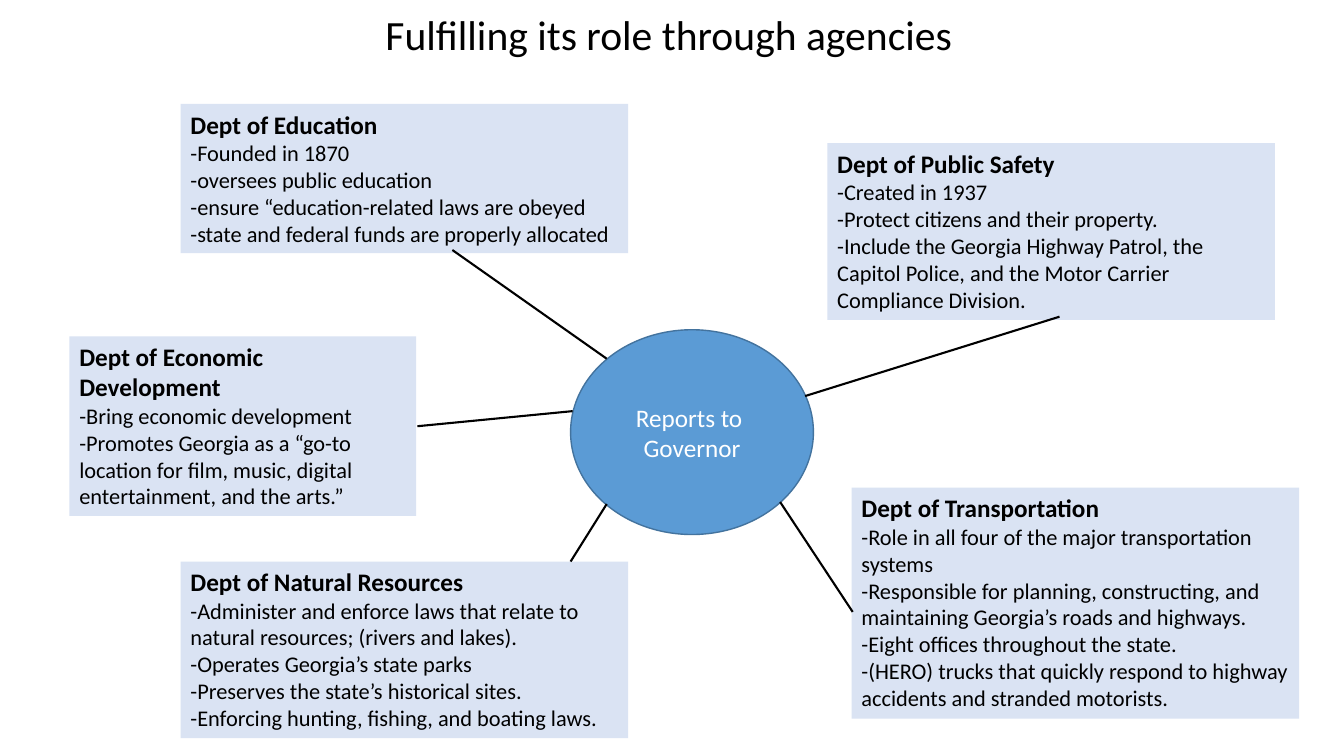
from lxml import etree
from pptx import Presentation
from pptx import util as u
from pptx.dml.color import RGBColor
from pptx.enum import shapes, text
from pptx.oxml import ns

BLACK = RGBColor(0x00, 0x00, 0x00)
WHITE = RGBColor(0xFF, 0xFF, 0xFF)
HUB_BLUE = RGBColor(0x5B, 0x9B, 0xD5)
HUB_EDGE = RGBColor(0x43, 0x73, 0x9E)
PALE_BLUE = RGBColor(0xDA, 0xE3, 0xF3)
FONT = "Calibri"

DEPARTMENTS = [
    ("Dept of Education", (4.55, 2.62, 11.28, 3.76), [
        "-Founded in 1870",
        "-oversees public education",
        "-ensure “education-related laws are obeyed",
        "-state and federal funds are properly allocated",
    ]),
    ("Dept of Public Safety", (20.85, 3.61, 11.28, 4.45), [
        "-Created in 1937",
        "-Protect citizens and their property.",
        "-Include the Georgia Highway Patrol, the Capitol Police, "
        "and the Motor Carrier Compliance Division.",
    ]),
    ("Dept of Transportation", (21.46, 12.29, 11.28, 5.82), [
        "-Role in all four of the major transportation systems",
        "-Responsible for planning, constructing, and maintaining "
        "Georgia’s roads and highways.",
        "-Eight offices throughout the state.",
        "-(HERO) trucks that quickly respond to highway accidents "
        "and stranded motorists.",
    ]),
    ("Dept of Economic Development", (1.75, 8.48, 8.74, 4.52), [
        "-Bring economic development",
        "-Promotes Georgia as a “go-to location for film, music, digital "
        "entertainment, and the arts.”",
    ]),
    ("Dept of Natural Resources", (4.55, 14.15, 11.28, 4.45), [
        "-Administer and enforce laws that relate to natural resources; "
        "(rivers and lakes).",
        "-Operates Georgia’s state parks",
        "-Preserves the state’s historical sites.",
        "-Enforcing hunting, fishing, and boating laws.",
    ]),
]

SPOKES = [
    (11.4, 6.3, 15.29, 9.04),
    (10.52, 10.74, 14.43, 10.36),
    (19.66, 12.65, 21.49, 15.42),
    (26.7, 7.98, 20.29, 9.98),
    (14.38, 14.15, 15.29, 12.7),
]


def cm(values):
    """Turn plain numbers into centimetre lengths."""
    return [u.Cm(value) for value in values]


def add_run(paragraph, wording, size, color, bold=False):
    """Add one formatted run to a paragraph."""
    run = paragraph.add_run()
    run.text = wording
    run.font.name = FONT
    run.font.size = u.Pt(size)
    run.font.bold = bold
    run.font.color.rgb = color


def write_lines(frame, lines, color, align):
    """Write (wording, size, bold) lines as one paragraph each."""
    for index, (wording, size, bold) in enumerate(lines):
        paragraph = frame.paragraphs[0] if index == 0 else frame.add_paragraph()
        paragraph.alignment = align
        add_run(paragraph, wording, size, color, bold)


def set_title(slide, wording):
    """Place and format the slide title."""
    title = slide.shapes.title
    title.left, title.top, title.width, title.height = cm((2.26, 0.41, 29.21, 1.19))
    frame = title.text_frame
    frame.auto_size = text.MSO_AUTO_SIZE.NONE
    frame.vertical_anchor = text.MSO_ANCHOR.MIDDLE
    frame.paragraphs[0].line_spacing = 0.7
    write_lines(frame, [(wording, 29.7, False)], BLACK, text.PP_ALIGN.CENTER)


def add_hub(slide):
    """Add the central ellipse to which the departments connect."""
    hub = slide.shapes.add_shape(
        shapes.MSO_SHAPE.OVAL, *cm((14.38, 8.31, 6.12, 5.16)))
    hub.shadow.inherit = False
    hub.fill.solid()
    hub.fill.fore_color.rgb = HUB_BLUE
    hub.line.color.rgb = HUB_EDGE
    hub.line.width = u.Pt(1)
    hub.text_frame.vertical_anchor = text.MSO_ANCHOR.MIDDLE
    write_lines(hub.text_frame, [("Reports to ", 18, False), ("Governor", 18, False)],
                WHITE, text.PP_ALIGN.CENTER)


def add_department(slide, name, bounds, duties):
    """Add a department box with its bold name and its duties."""
    department = slide.shapes.add_textbox(*cm(bounds))
    department.fill.solid()
    department.fill.fore_color.rgb = PALE_BLUE
    frame = department.text_frame
    frame.word_wrap = True
    frame.auto_size = text.MSO_AUTO_SIZE.SHAPE_TO_FIT_TEXT
    lines = [(name, 18, True)] + [(duty, 16, False) for duty in duties]
    write_lines(frame, lines, BLACK, text.PP_ALIGN.LEFT)


def add_spoke(slide, ends):
    """Add a plain line between a department and the hub."""
    spoke = slide.shapes.add_connector(shapes.MSO_CONNECTOR.STRAIGHT, *cm(ends))
    spoke.line.color.rgb = BLACK
    spoke.line.width = u.Pt(1.5)
    etree.SubElement(spoke._element.spPr, ns.qn("a:effectLst"))


def main():
    """Build the slide and save it."""
    deck = Presentation()
    deck.slide_width, deck.slide_height = cm((33.87, 19.05))
    slide = deck.slides.add_slide(deck.slide_layouts.get_by_name("Title Only"))
    set_title(slide, "Fulfilling its role through agencies")
    add_hub(slide)
    for name, bounds, duties in DEPARTMENTS:
        add_department(slide, name, bounds, duties)
    for ends in SPOKES:
        add_spoke(slide, ends)
    deck.save("out.pptx")


if __name__ == "__main__":
    main()
